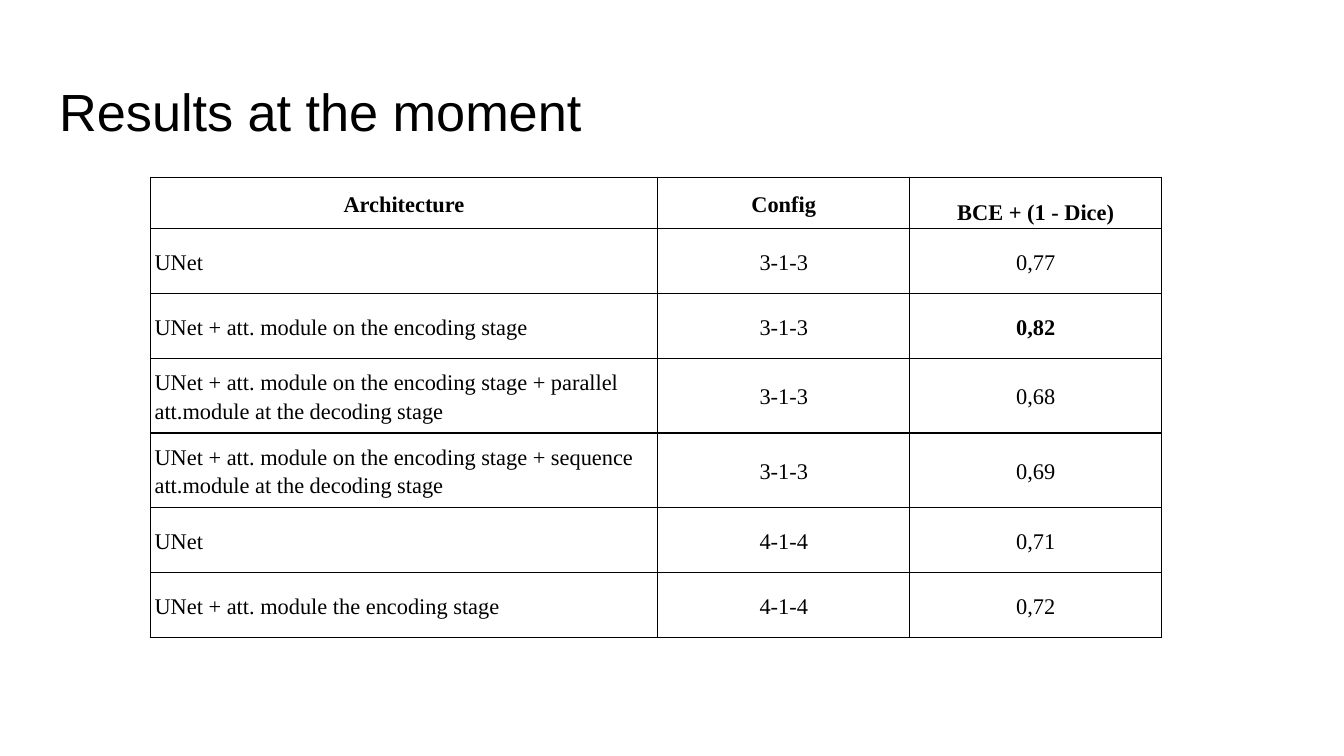
from lxml import etree
from pptx import Presentation
from pptx.dml.color import RGBColor
from pptx.enum.text import MSO_ANCHOR, PP_ALIGN
from pptx.oxml.ns import qn
from pptx.util import Pt

TOP, MIDDLE, BOTTOM = MSO_ANCHOR.TOP, MSO_ANCHOR.MIDDLE, MSO_ANCHOR.BOTTOM
LEFT, CENTER = PP_ALIGN.LEFT, PP_ALIGN.CENTER
BLACK = RGBColor(0, 0, 0)
TITLE_ONLY = 5

RESULTS = [
    ("Architecture", "Config", "BCE + (1 - Dice)"),
    ("UNet", "3-1-3", "0,77"),
    ("UNet + att. module on the encoding stage", "3-1-3", "0,82"),
    ("UNet + att. module on the encoding stage + parallel "
     "att.module at the decoding stage", "3-1-3", "0,68"),
    ("UNet + att. module on the encoding stage + sequence "
     "att.module at the decoding stage", "3-1-3", "0,69"),
    ("UNet", "4-1-4", "0,71"),
    ("UNet + att. module the encoding stage", "4-1-4", "0,72"),
]
BEST_SCORE = "0,82"
COLUMN_WIDTHS = (271.8, 135, 135)
HEADER_HEIGHT, SINGLE_HEIGHT, DOUBLE_HEIGHT = 27.4, 34.8, 40
ROW_HEIGHTS = (HEADER_HEIGHT, SINGLE_HEIGHT, SINGLE_HEIGHT,
               DOUBLE_HEIGHT, DOUBLE_HEIGHT, SINGLE_HEIGHT, SINGLE_HEIGHT)


def style_text(paragraph, font_name, size, bold=False):
    """Format every run of a paragraph."""
    for run in paragraph.runs:
        run.font.name = font_name
        run.font.size = Pt(size)
        run.font.bold = bold
        run.font.color.rgb = BLACK


def add_borders(cell):
    """Draw a thin solid line on all four sides of a cell."""
    properties = cell._tc.get_or_add_tcPr()
    for side in ("a:lnL", "a:lnR", "a:lnT", "a:lnB"):
        line = etree.SubElement(properties, qn(side), w=str(Pt(0.75)))
        fill = etree.SubElement(line, qn("a:solidFill"))
        etree.SubElement(fill, qn("a:srgbClr"), val=str(BLACK))


def place_title(title, left, top, width, height):
    """Move and format the slide title."""
    title.left, title.top = Pt(left), Pt(top)
    title.width, title.height = Pt(width), Pt(height)
    frame = title.text_frame
    frame.text = "Results at the moment"
    frame.word_wrap = True
    frame.vertical_anchor = TOP
    frame.margin_left = frame.margin_right = Pt(7.2)
    frame.margin_top = frame.margin_bottom = Pt(7.2)
    heading = frame.paragraphs[0]
    heading.alignment = LEFT
    style_text(heading, "Arial", 28)


def fill_cell(cell, text, row, column):
    """Write one result and format its cell."""
    header = row == 0
    cell.text_frame.text = text
    cell.margin_left = cell.margin_right = Pt(2.25)
    cell.margin_top = cell.margin_bottom = Pt(1.5)
    cell.vertical_anchor = BOTTOM if header and column == 2 else MIDDLE
    paragraph = cell.text_frame.paragraphs[0]
    paragraph.alignment = CENTER if header or column else LEFT
    paragraph.line_spacing = 1.15
    style_text(paragraph, "Times New Roman", 12, header or text == BEST_SCORE)
    add_borders(cell)
    cell.fill.background()


def add_results(slide, left, top):
    """Add the table of architectures and their scores."""
    table = slide.shapes.add_table(
        len(RESULTS), len(COLUMN_WIDTHS), Pt(left), Pt(top),
        Pt(sum(COLUMN_WIDTHS)), Pt(sum(ROW_HEIGHTS))).table
    table.first_row = table.horz_banding = False
    for column, width in zip(table.columns, COLUMN_WIDTHS):
        column.width = Pt(width)
    for row, height in zip(table.rows, ROW_HEIGHTS):
        row.height = Pt(height)
    for row, values in enumerate(RESULTS):
        for column, text in enumerate(values):
            fill_cell(table.cell(row, column), text, row, column)


def main():
    """Build and save the results slide."""
    presentation = Presentation()
    presentation.slide_width, presentation.slide_height = Pt(720), Pt(405)
    slide = presentation.slides.add_slide(presentation.slide_layouts[TITLE_ONLY])
    place_title(slide.shapes.title, 24.5, 35, 671, 45)
    add_results(slide, 80.6, 95)
    presentation.save("out.pptx")


if __name__ == "__main__":
    main()
